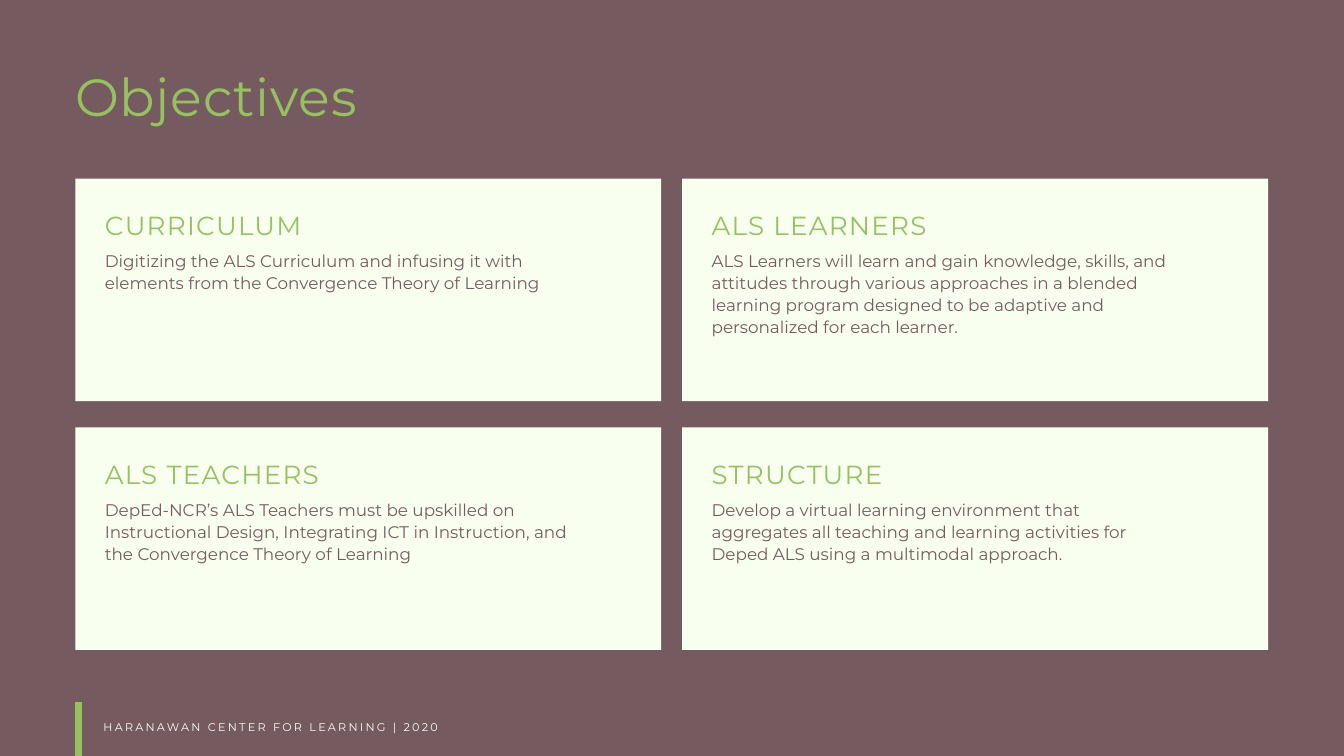
from itertools import product

from pptx import Presentation
from pptx.dml.color import RGBColor
from pptx.enum.shapes import MSO_SHAPE as Shape
from pptx.util import Inches, Pt

MAUVE = RGBColor(0x75, 0x5B, 0x60)
GREEN = RGBColor(0x97, 0xC1, 0x60)
CREAM = RGBColor(0xF8, 0xFF, 0xEF)

STYLES = {
    "title": {"size": 56, "color": GREEN, "lead": 56, "track": 0.8},
    "head": {"size": 28, "color": GREEN, "lead": 36.4, "track": 1.4},
    "body": {"size": 18, "color": MAUVE, "lead": 23.4, "track": 0},
    "foot": {"size": 12, "color": CREAM, "lead": 16.8, "track": 2.4},
}

CARDS = [
    ("CURRICULUM",
     "Digitizing the ALS Curriculum and infusing it with elements from "
     "the Convergence Theory of Learning"),
    ("ALS LEARNERS",
     "ALS Learners will learn and gain knowledge, skills, and attitudes "
     "through various approaches in a blended learning program designed "
     "to be adaptive and personalized for each learner."),
    ("ALS TEACHERS",
     "DepEd-NCR’s ALS Teachers must be upskilled on Instructional Design, "
     "Integrating ICT in Instruction, and the Convergence Theory of Learning"),
    ("STRUCTURE",
     "Develop a virtual learning environment that aggregates all teaching "
     "and learning activities for Deped ALS using a multimodal approach."),
]


def add_text(slide, box, text, style):
    """Place one paragraph of text in a box without margins."""
    look = STYLES[style]
    frame = slide.shapes.add_textbox(*map(Inches, box)).text_frame
    frame.word_wrap = True
    for side in ("left", "top", "right", "bottom"):
        setattr(frame, f"margin_{side}", 0)
    para = frame.paragraphs[0]
    para.line_spacing = Pt(look["lead"])
    run = para.add_run()
    run.text = text
    for key, value in {"name": "Montserrat", "size": Pt(look["size"])}.items():
        setattr(run.font, key, value)
    run.font.color.rgb = look["color"]
    run.font._element.set("spc", str(round(look["track"] * 100)))


def add_block(slide, box, color):
    """Place a plain filled rectangle."""
    block = slide.shapes.add_shape(Shape.RECTANGLE, *map(Inches, box))
    block.shadow.inherit = False
    block.fill.solid()
    block.fill.fore_color.rgb = color
    block.line.fill.background()


def add_card(slide, box, head, body):
    """Place a card with its heading and body text."""
    left, top, width, height = box
    inner = width - 1.76
    add_block(slide, box, CREAM)
    add_text(slide, (left + 0.44, top + 0.42, inner, 0.48), head, "head")
    add_text(slide, (left + 0.44, top + 1.05, inner, height - 1.4), body, "body")


def add_grid(slide, box, gap_x, gap_y):
    """Place the cards in two rows of two."""
    left, top, width, height = box
    wide, high = (width - gap_x) / 2, (height - gap_y) / 2
    for (row, col), (head, body) in zip(product(range(2), repeat=2), CARDS):
        spot = (left + col * (wide + gap_x), top + row * (high + gap_y), wide, high)
        add_card(slide, spot, head, body)


def add_footer(slide, box):
    """Place the footer bar and its caption."""
    left, top, width, height = box
    add_block(slide, (left, top, 0.1, height), GREEN)
    add_text(slide, (left + 0.42, top + 0.24, width - 0.42, 0.21),
             "HARANAWAN CENTER FOR LEARNING | 2020", "foot")


def main():
    """Build the slide and save it."""
    deck = Presentation()
    deck.slide_width, deck.slide_height = Inches(20), Inches(11.25)
    slide = deck.slides.add_slide(deck.slide_layouts[6])
    slide.background.fill.solid()
    slide.background.fill.fore_color.rgb = MAUVE
    add_text(slide, (1.12, 1.11, 17.6, 0.82), "Objectives", "title")
    add_grid(slide, (1.12, 2.66, 17.75, 7.01), 0.31, 0.39)
    add_footer(slide, (1.12, 10.45, 8.35, 0.8))
    deck.save("out.pptx")


if __name__ == "__main__":
    main()
